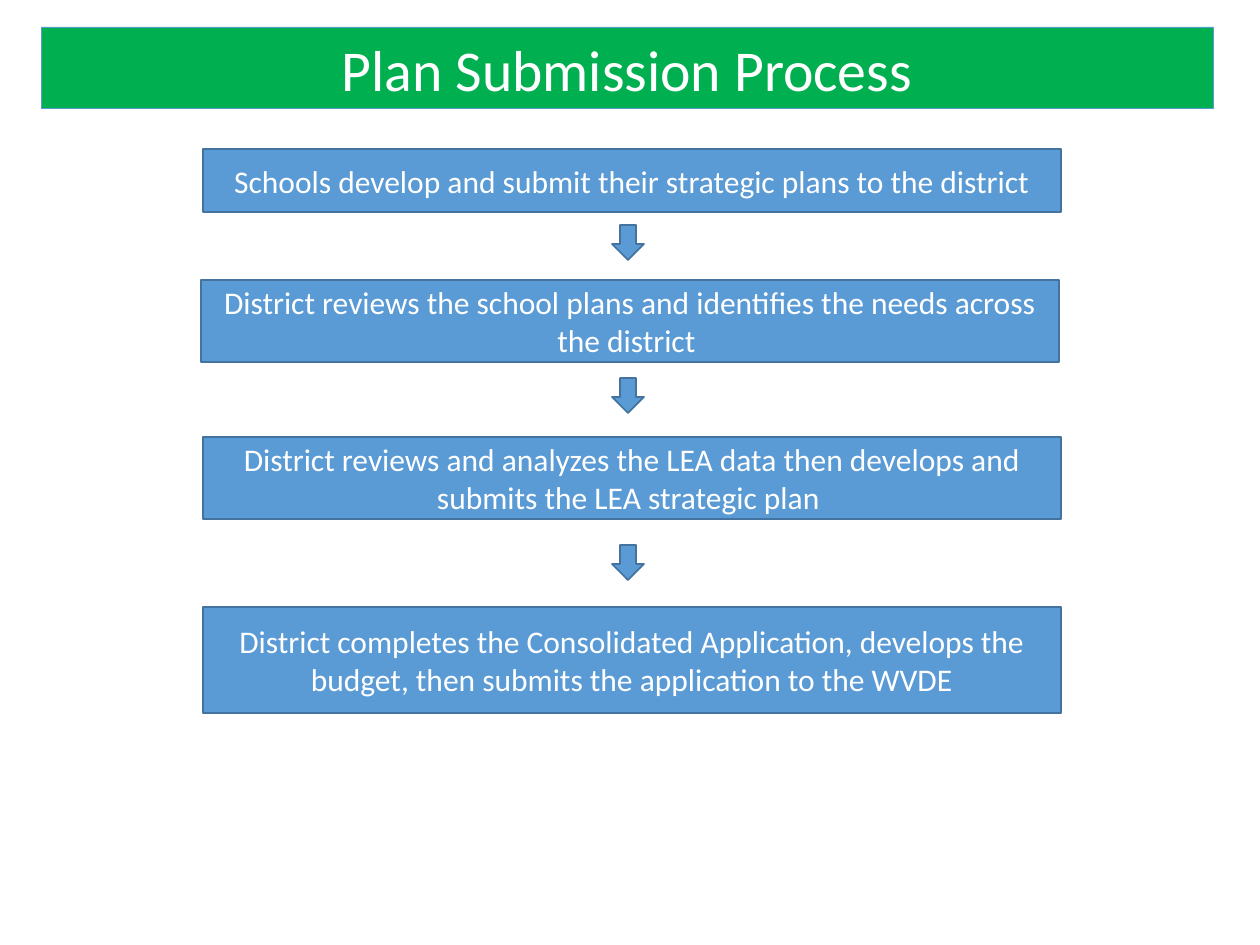
from dataclasses import dataclass

from pptx import Presentation
from pptx.dml.color import RGBColor
from pptx.enum.shapes import MSO_SHAPE
from pptx.enum.text import MSO_ANCHOR, MSO_AUTO_SIZE, PP_ALIGN
from pptx.util import Pt

RECT, DOWN_ARROW = MSO_SHAPE.RECTANGLE, MSO_SHAPE.DOWN_ARROW
MIDDLE, CENTER = MSO_ANCHOR.MIDDLE, PP_ALIGN.CENTER
NO_AUTOFIT = MSO_AUTO_SIZE.NONE
TITLE_ONLY = 5
EMU_PER_INCH, PX_PER_INCH = 914400, 126


@dataclass(frozen=True)
class Theme:
    font: str = "Calibri"
    title_size: int = 33
    step_size: int = 18
    text: RGBColor = RGBColor(0xFF, 0xFF, 0xFF)
    banner: RGBColor = RGBColor(0x00, 0xB0, 0x50)
    step: RGBColor = RGBColor(0x5B, 0x9B, 0xD5)
    outline: RGBColor = RGBColor(0x43, 0x73, 0x9E)


theme = Theme()


def px(n):
    return round(n * EMU_PER_INCH / PX_PER_INCH)


def style(sp, fill, line, width, text="", size=theme.step_size):
    sp.fill.solid()
    sp.fill.fore_color.rgb = fill
    sp.line.color.rgb = line
    sp.line.width = Pt(width)
    if not text:
        return
    tf = sp.text_frame
    tf.text = text
    tf.word_wrap = True
    tf.auto_size = NO_AUTOFIT
    tf.vertical_anchor = MIDDLE
    p = tf.paragraphs[0]
    p.alignment = CENTER
    p.font.name = theme.font
    p.font.size = Pt(size)
    p.font.color.rgb = theme.text


prs = Presentation()
prs.slide_width, prs.slide_height = px(1260), px(945)
s = prs.slides.add_slide(prs.slide_layouts[TITLE_ONLY])

title = s.shapes.title
title.left, title.top, title.width, title.height = px(41), px(27), px(1172), px(82)
style(title, theme.banner, theme.step, 0.5, "Plan Submission Process", theme.title_size)

# left, top, height, text
STEPS = [
    (203, 149, 63, "Schools develop and submit their strategic plans to the district"),
    (201, 280, 82, "District reviews the school plans and identifies the needs across the district "),
    (203, 437, 82, "District reviews and analyzes the LEA data then develops and submits the LEA strategic plan "),
    (203, 607, 106, "District completes the Consolidated Application, develops the budget, "
                    "then submits the application to the WVDE"),
]
for left, top, height, text in STEPS:
    sp = s.shapes.add_shape(RECT, px(left), px(top), px(858), px(height))
    sp.shadow.inherit = False
    style(sp, theme.step, theme.outline, 1, text)

for top in (225, 378, 545):
    arrow = s.shapes.add_shape(DOWN_ARROW, px(612), px(top), px(32), px(35))
    arrow.shadow.inherit = False
    style(arrow, theme.step, theme.outline, 1)

prs.save("out.pptx")
